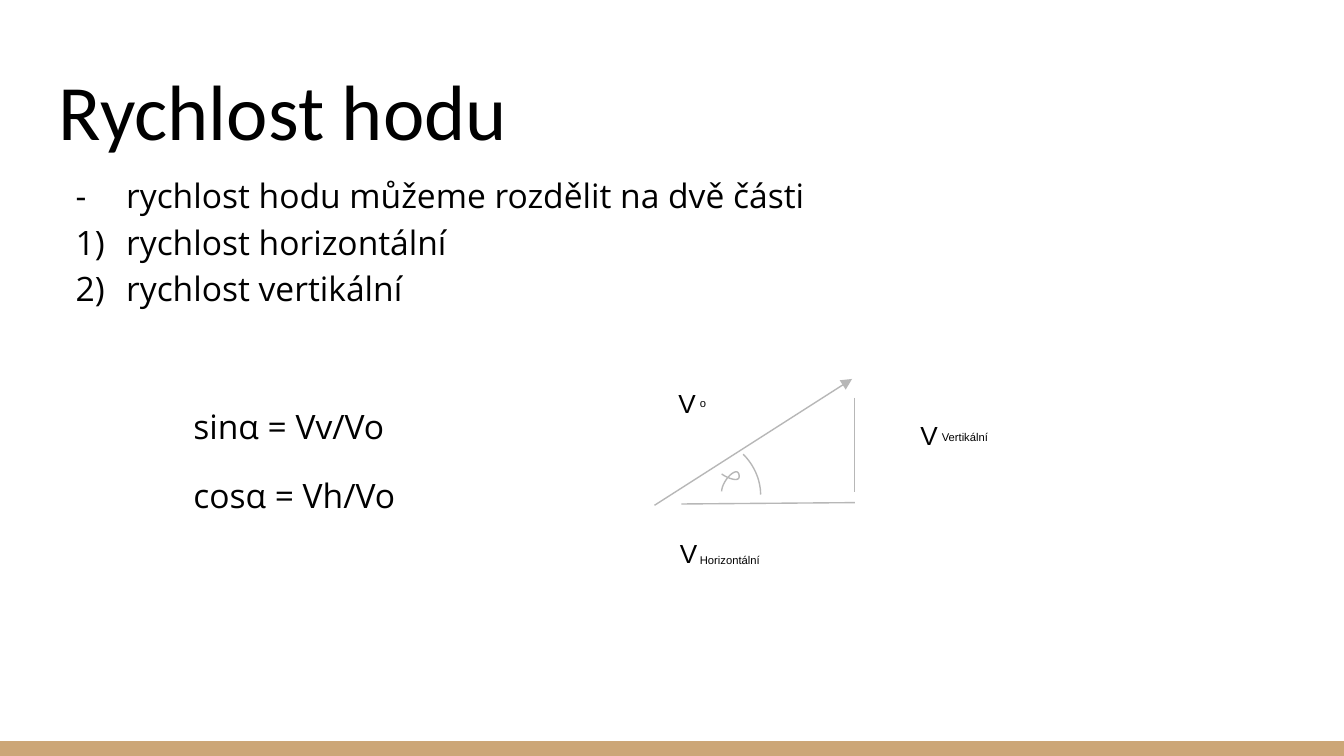
import pptx
import pptx.util
import pptx.dml.color
import pptx.enum.shapes
import pptx.enum.text
import pptx.oxml.ns
import lxml.etree

HUES = {"ink": "000000", "line": "B7B7B7", "band": "CCA677"}
CELL = pptx.util.Inches(0.1)
COLS, ROWS = 100, 56.25


def grid(*spans):
    """Turn grid columns and rows into lengths."""
    return [pptx.util.Emu(round(span * CELL)) for span in spans]


def hue(name):
    """Look up a named colour."""
    return pptx.dml.color.RGBColor.from_string(HUES[name])


def tag(node, name, **attrs):
    """Add a drawing element with attributes."""
    return lxml.etree.SubElement(node, pptx.oxml.ns.qn(name), attrs)


def frame(slide, box):
    """Add a wrapping text box with even insets."""
    text = slide.shapes.add_textbox(*grid(*box)).text_frame
    text.word_wrap = True
    text.margin_left = text.margin_right = CELL
    text.margin_top = text.margin_bottom = CELL
    return text


def write(para, words, size, face):
    """Add one run to a paragraph."""
    run = para.add_run()
    run.text = words
    run.font.size = pptx.util.Pt(size)
    run.font.name = face
    run.font.color.rgb = hue("ink")


def pen(shape):
    """Give a line or outline its thin grey stroke."""
    shape.line.color.rgb = hue("line")
    shape.line.width = pptx.util.Pt(0.75)


def band(slide, box):
    """Draw the coloured strip at the foot."""
    strip = slide.shapes.add_shape(pptx.enum.shapes.MSO_SHAPE.RECTANGLE, *grid(*box))
    strip.shadow.inherit = False
    strip.fill.solid()
    strip.fill.fore_color.rgb = hue("band")
    strip.line.fill.background()


def title(slide, box):
    """Write the heading at the bottom of its box."""
    text = frame(slide, box)
    text.vertical_anchor = pptx.enum.text.MSO_ANCHOR.BOTTOM
    write(text.paragraphs[0], "Rychlost hodu", 42, "Calibri")


def body(slide, box):
    """Write the listed points and the two formulas."""
    text = frame(slide, box)
    dash, count = ("a:buChar", {"char": "-"}), ("a:buAutoNum", {"type": "arabicParenR"})
    items = [
        ("rychlost hodu můžeme rozdělit na dvě části", dash, 0),
        ("rychlost horizontální", count, 0),
        ("rychlost vertikální", count, 0),
        ("sinα = Vv/Vo", None, 49),
        ("cosα = Vh/Vo", None, 12),
    ]
    for rank, (words, mark, gap) in enumerate(items):
        para = text.add_paragraph() if rank else text.paragraphs[0]
        para.line_spacing = 1.15
        para.space_before = pptx.util.Pt(gap)
        props = para._p.get_or_add_pPr()
        left, hang = grid(5, -3.75) if mark else grid(10, 0)
        props.set("marL", str(left))
        props.set("indent", str(hang))
        if mark:
            tag(tag(props, "a:buClr"), "a:srgbClr", val=HUES["ink"])
            tag(props, "a:buFont", typeface="Open Sans")
            tag(props, mark[0], **mark[1])
        write(para, words, 18, "Open Sans")


def side(slide, start, end, head=False):
    """Draw one side of the triangle."""
    line = slide.shapes.add_connector(
        pptx.enum.shapes.MSO_CONNECTOR.STRAIGHT, *grid(*start, *end))
    pen(line)
    if head:
        tag(line.line._get_or_add_ln(), "a:tailEnd", type="triangle")
    tag(line._element.spPr, "a:effectLst")


def bend(knots, steps=16):
    """Sample points along one cubic curve."""
    for step in range(1, steps + 1):
        t = step / steps
        parts = ((1 - t) ** 3, 3 * t * (1 - t) ** 2, 3 * t * t * (1 - t), t ** 3)
        yield grid(*(sum(p * k[axis] for p, k in zip(parts, knots)) for axis in (0, 1)))


def curve(slide, knots, turn=0):
    """Draw an open outline of joined cubic curves."""
    form = slide.shapes.build_freeform(*grid(*knots[0]))
    for first in range(0, len(knots) - 1, 3):
        form.add_line_segments(list(bend(knots[first:first + 4])), close=False)
    shape = form.convert_to_shape()
    shape.shadow.inherit = False
    shape.fill.background()
    pen(shape)
    shape.rotation = turn


def label(slide, spot, wide, words, shift, span):
    """Write V with its small index beside it."""
    x, y = spot
    big = frame(slide, (x, y, wide, 4.4))
    write(big.paragraphs[0], "V", 14, "Arial")
    small = frame(slide, (x + shift[0], y + shift[1], span, 3))
    write(small.paragraphs[0], words, 6, "Arial")


def sketch(slide, box):
    """Draw the triangle of speeds with its angle and labels."""
    left, top = box[:2]

    def at(x, y):
        """Place a point within the sketch."""
        return left + x, top + y

    side(slide, at(0, 9.8), at(14.7, 0.4), head=True)
    side(slide, at(2, 9.7), at(14.9, 9.6))
    side(slide, at(14.9, 1.8), at(14.9, 8.8))
    label(slide, at(0.9, 11.2), 15, "Horizontální", (1.5, 1.7), 12.3)
    label(slide, at(18.8, 2.4), 7.6, "Vertikální", (1.6, 1.3), 12.3)
    arc = [(6.6, 6), (7.4, 6.8), (7.9, 7.9), (7.9, 9)]
    alpha = [(6.3, 8.6), (5.9, 8.3), (4.9, 7.9), (5, 8.5),
             (5.1, 9.3), (6.3, 8.1), (6.3, 7.3)]
    curve(slide, [at(*knot) for knot in arc])
    curve(slide, [at(*knot) for knot in alpha], 180)
    label(slide, at(0.8, 0), 3.6, "o", (1.6, 1.2), 3)


def main():
    """Build and save the slide."""
    deck = pptx.Presentation()
    deck.slide_width, deck.slide_height = grid(COLS, ROWS)
    slide = deck.slides.add_slide(deck.slide_layouts[6])
    band(slide, (0, ROWS - 1.1, COLS, 1.1))
    title(slide, (3.4, 3.5, 93.2, 9.1))
    body(slide, (3.4, 11.6, 93.2, 37.4))
    sketch(slide, (48.7, 27.8, 32.7, 15.6))
    deck.save("out.pptx")


if __name__ == "__main__":
    main()
